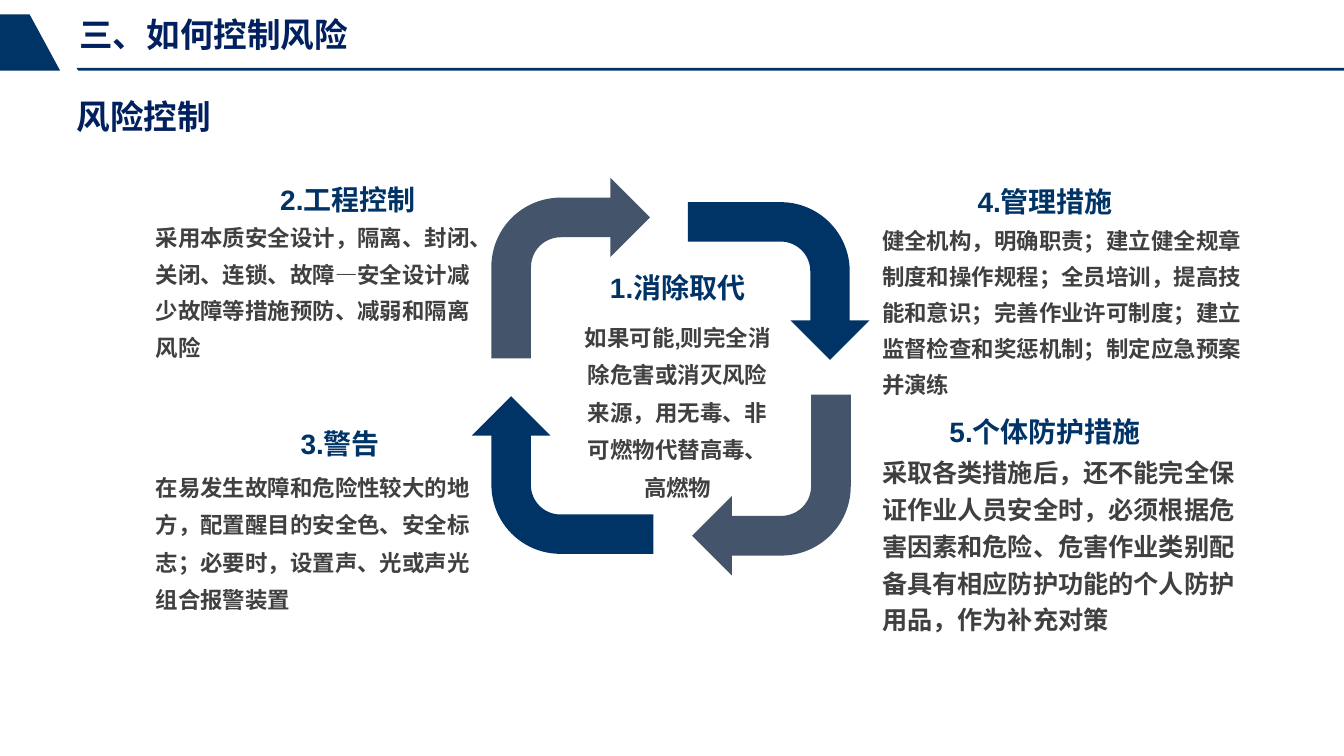
import pptx
import pptx.util
import pptx.dml.color
import pptx.enum.shapes
import pptx.enum.text

PX = 9144
FONT = "Arial"
COLORS = {
    "navy": "003366",
    "slate": "44546A",
    "title": "002060",
    "body": "404040",
}
HEADINGS = [
    ("三、如何控制风险", (83, 15, 454, 43)),
    ("风险控制", (80, 100, 454, 43)),
]
BANNER = [
    [(80, 71), (1406, 71), (1406, 74), (82, 74)],
    [(31, 15), (63, 74), (0, 74), (0, 15)],
]
ARROWS = [
    ((514, 186, 166, 189), 0, "slate"),
    ((732, 199, 165, 190), 90, "navy"),
    ((506, 402, 165, 190), 270, "navy"),
    ((724, 413, 166, 189), 180, "slate"),
]
MEASURES = [
    ("1.消除取代", (608, 278, 202, 46),
     "如果可能,则完全消除危害或消灭风险来源，用无毒、非可燃物代替高毒、高燃物",
     (598, 323, 222, 202), {"size": 16.9, "spacing": 28.2, "align": "CENTER"}),
    ("2.工程控制", (235, 186, 258, 46),
     "采用本质安全设计，隔离、封闭、关闭、连锁、故障—安全设计减少故障等措施预防、减弱和隔离风险",
     (153, 219, 350, 163), {"size": 16.9, "spacing": 27.7}),
    ("3.警告", (235, 441, 242, 46),
     "在易发生故障和危险性较大的地方，配置醒目的安全色、安全标志；必要时，设置声、光或声光组合报警装置",
     (153, 480, 350, 163), {"size": 16.9, "spacing": 28.2}),
    ("4.管理措施", (926, 188, 335, 46),
     "健全机构，明确职责；建立健全规章制度和操作规程；全员培训，提高技能和意识；"
     "完善作业许可制度；建立监督检查和奖惩机制；制定应急预案并演练",
     (913, 223, 400, 196), {"size": 16.9, "spacing": 27.1}),
    ("5.个体防护措施", (926, 429, 335, 46),
     "采取各类措施后，还不能完全保证作业人员安全时，必须根据危害因素和危险、"
     "危害作业类别配备具有相应防护功能的个人防护用品，作为补充对策",
     (913, 467, 400, 203), {"size": 19, "spacing": 27.7}),
]


def emu(values):
    return [v * PX for v in values]


def rgb(name):
    return pptx.dml.color.RGBColor.from_string(COLORS[name])


def paint(sp, color):
    sp.shadow.inherit = False
    sp.fill.solid()
    sp.fill.fore_color.rgb = rgb(color)
    sp.line.fill.background()


def add_text(s, text, box, *, size, color, align="LEFT", spacing=None, inset=True):
    tf = s.shapes.add_textbox(*emu(box)).text_frame
    tf.word_wrap = True
    if not inset:
        tf.margin_left = tf.margin_top = tf.margin_right = tf.margin_bottom = 0
    p = tf.paragraphs[0]
    p.alignment = getattr(pptx.enum.text.PP_ALIGN, align)
    if spacing:
        p.line_spacing = pptx.util.Pt(spacing)
    r = p.add_run()
    r.text = text
    r.font.name = FONT
    r.font.size = pptx.util.Pt(size)
    r.font.bold = True
    r.font.color.rgb = rgb(color)


def add_polygon(s, points, color):
    builder = s.shapes.build_freeform(*points[0], scale=PX)
    builder.add_line_segments(points[1:], close=True)
    paint(builder.convert_to_shape(), color)


def add_arrow(s, box, rotation, color):
    kind = pptx.enum.shapes.MSO_SHAPE.BENT_ARROW
    sp = s.shapes.add_shape(kind, *emu(box))
    sp.rotation = rotation
    paint(sp, color)


def add_measure(s, title, title_box, body, body_box, body_format):
    add_text(s, title, title_box, size=21.1, color="navy", align="CENTER")
    add_text(s, body, body_box, color="body", **body_format)


def main():
    prs = pptx.Presentation()
    prs.slide_width, prs.slide_height = emu((1406, 791))
    s = prs.slides.add_slide(prs.slide_layouts[6])
    for points in BANNER:
        add_polygon(s, points, "navy")
    for text, box in HEADINGS:
        add_text(s, text, box, size=25.3, color="title", inset=False)
    for arrow in ARROWS:
        add_arrow(s, *arrow)
    for measure in MEASURES:
        add_measure(s, *measure)
    prs.save("out.pptx")


if __name__ == "__main__":
    main()
